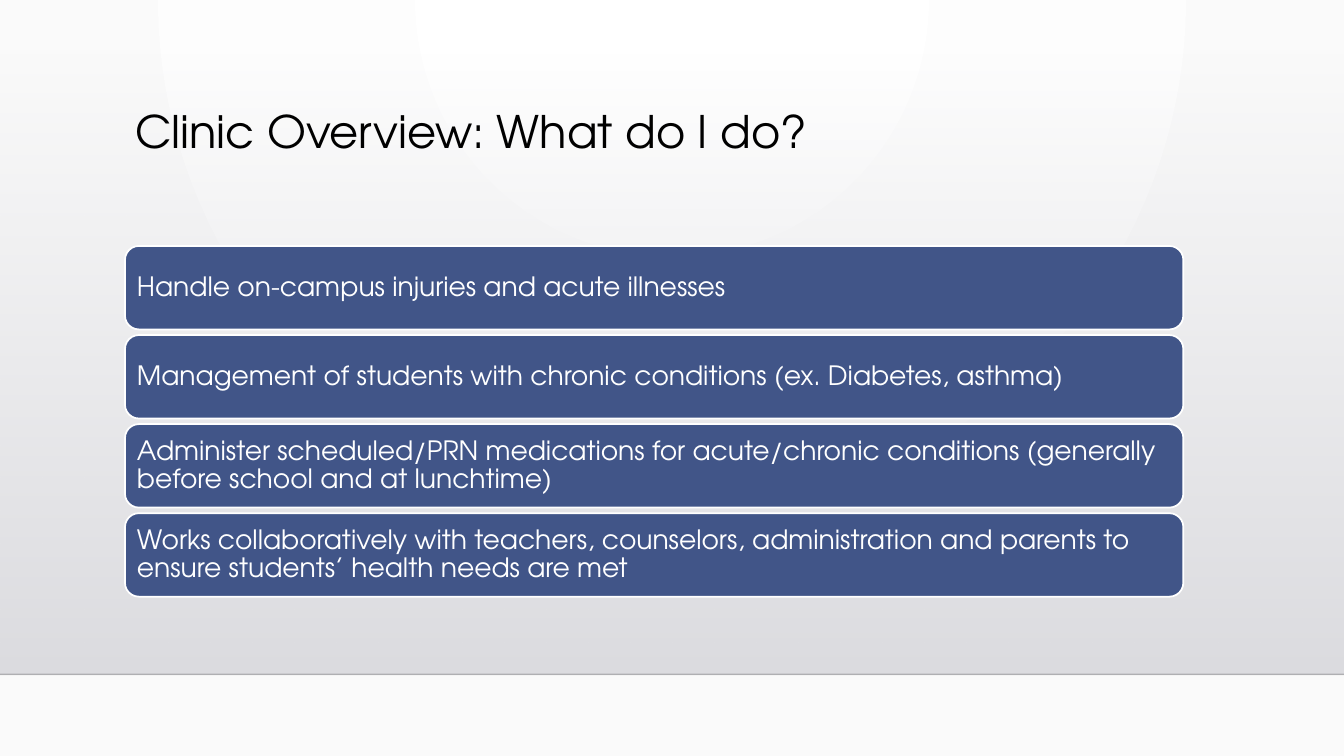
from lxml import etree
from pptx import Presentation, util as u
from pptx.dml import color
from pptx.enum import shapes, text
from pptx.oxml import ns

FONT = "TeX Gyre Adventor"
SLIDE_W, SLIDE_H = 960, 540
FLOOR_TOP = 481.7
LEFT, CONTENT_W = 89.3, 756

DUTIES = [
    "Handle on-campus injuries and acute illnesses",
    "Management of students with chronic conditions (ex. Diabetes, asthma)",
    "Administer scheduled/PRN medications for acute/chronic conditions "
    "(generally before school and at lunchtime)",
    "Works collaboratively with teachers, counselors, administration and "
    "parents to ensure students’ health needs are met",
]


def rgb(value):
    return color.RGBColor.from_string(value)


def add_child(parent, tag, **attributes):
    return etree.SubElement(parent, ns.qn(tag), **attributes)


def set_alpha(parent, percent):
    """Make the first solid colour under parent partly transparent."""
    add_child(next(parent.iter(ns.qn("a:srgbClr"))), "a:alpha",
              val=str(percent * 1000))


def set_gradient(fill, first, last):
    fill.gradient()
    for stop, value in zip(fill.gradient_stops, (first, last)):
        stop.color.rgb = rgb(value)


def style_text(frame, wording, size, value, anchor):
    frame.text = wording
    frame.word_wrap = True
    frame.auto_size = text.MSO_AUTO_SIZE.NONE
    frame.vertical_anchor = anchor
    paragraph = frame.paragraphs[0]
    paragraph.alignment = text.PP_ALIGN.LEFT
    paragraph.line_spacing = 0.9
    font = paragraph.runs[0].font
    font.name, font.size, font.color.rgb = FONT, u.Pt(size), rgb(value)


def add_backdrop(slide):
    # Circular glow from the top centre
    set_gradient(slide.background.fill, "FFFFFF", "FAFAFA")
    glow = next(slide.element.iter(ns.qn("a:gradFill")))
    glow.remove(glow.find(ns.qn("a:lin")))
    circle = add_child(glow, "a:path", path="circle")
    add_child(circle, "a:fillToRect", l="43000", t="0", r="43000", b="100000")

    # Wall that darkens towards the floor
    wall_top = 36.7
    wall = slide.shapes.add_shape(
        shapes.MSO_SHAPE.RECTANGLE, 0, u.Pt(wall_top),
        u.Pt(SLIDE_W), u.Pt(FLOOR_TOP - wall_top))
    wall.shadow.inherit = False
    wall.line.fill.background()
    set_gradient(wall.fill, "DCDCE0", "DEDEE2")
    wall.fill.gradient_angle = 270
    set_alpha(wall.element.spPr, 0)

    # Floor line
    floor = slide.shapes.add_connector(
        shapes.MSO_CONNECTOR.STRAIGHT, 0, u.Pt(FLOOR_TOP),
        u.Pt(SLIDE_W), u.Pt(FLOOR_TOP))
    floor.line.color.rgb = rgb("000001")
    floor.line.width = u.Pt(1)
    set_alpha(floor.element.spPr, 20)
    add_child(floor.element.spPr, "a:effectLst")


def add_heading(slide, wording, left, top, width, height):
    heading = slide.shapes.title
    heading.left, heading.top = u.Pt(left), u.Pt(top)
    heading.width, heading.height = u.Pt(width), u.Pt(height)
    style_text(heading.text_frame, wording, 32, "000000", text.MSO_ANCHOR.TOP)


def add_duties(slide, duties, left, top, width, height, gap=4):
    bar_height = (height - gap * (len(duties) - 1)) / len(duties)
    for index, duty in enumerate(duties):
        bar = slide.shapes.add_shape(
            shapes.MSO_SHAPE.ROUNDED_RECTANGLE, u.Pt(left),
            u.Pt(top + index * (bar_height + gap)),
            u.Pt(width), u.Pt(bar_height))
        bar.shadow.inherit = False
        bar.fill.solid()
        bar.fill.fore_color.rgb = rgb("415588")
        bar.line.color.rgb = rgb("FFFFFF")
        bar.line.width = u.Pt(1.25)
        frame = bar.text_frame
        frame.margin_left = frame.margin_right = u.Pt(5.7)
        frame.margin_top = frame.margin_bottom = u.Pt(5.7)
        style_text(frame, duty, 19, "FFFFFF", text.MSO_ANCHOR.MIDDLE)


def main():
    deck = Presentation()
    deck.slide_width, deck.slide_height = u.Pt(SLIDE_W), u.Pt(SLIDE_H)
    slide = deck.slides.add_slide(deck.slide_layouts[5])
    add_backdrop(slide)
    # Bring the title in front of the backdrop
    slide.shapes.element.append(slide.shapes.title.element)
    add_heading(slide, "Clinic Overview: What do I do?",
                LEFT, 74.9, CONTENT_W, 82.8)
    add_duties(slide, DUTIES, LEFT, 175.7, CONTENT_W, 250.5)
    deck.save("out.pptx")


if __name__ == "__main__":
    main()
